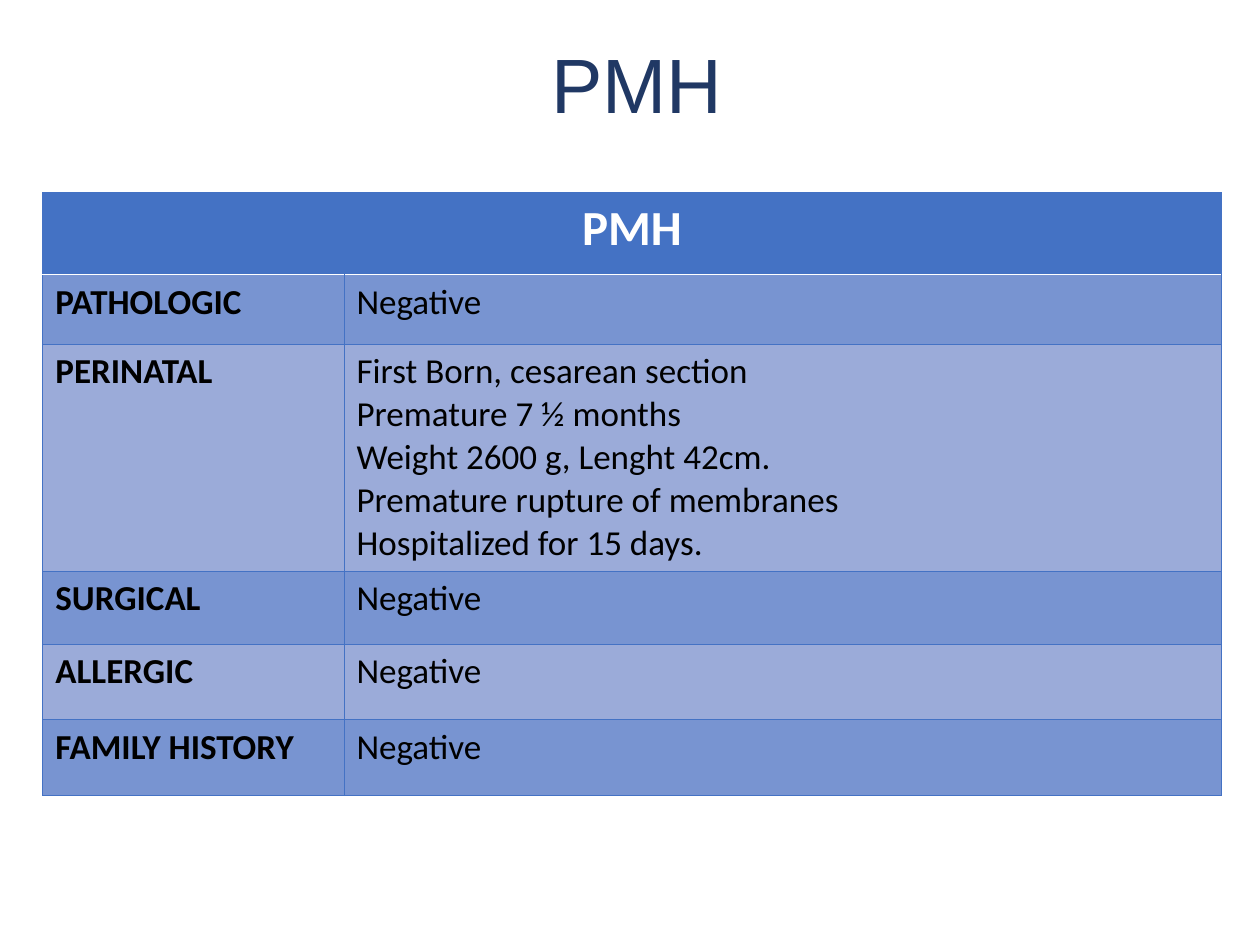
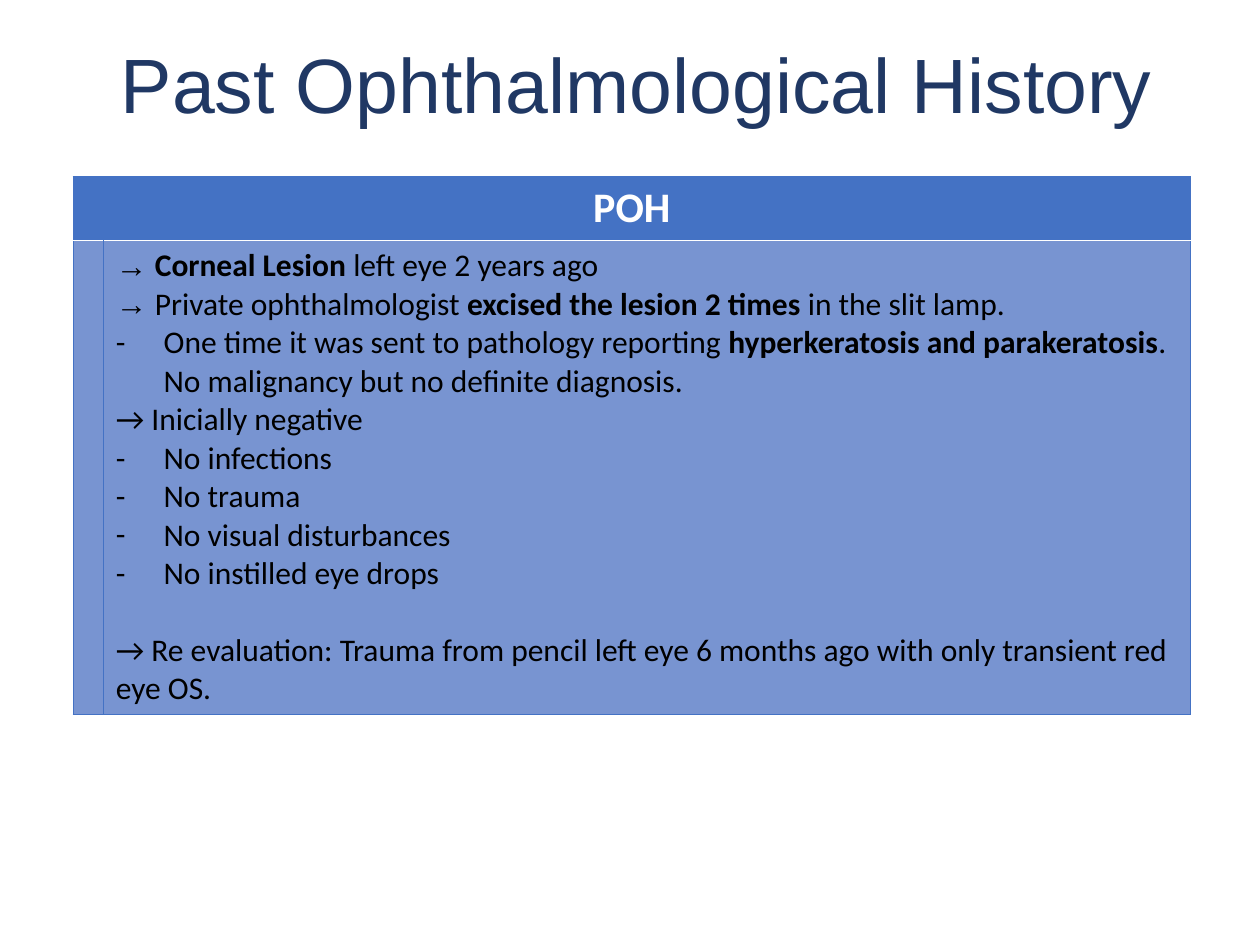
import pptx
import pptx.util
import pptx.dml.color
import pptx.enum.text
import pptx.oxml
import pptx.oxml.ns
from pptx.util import Inches

RGBColor = pptx.dml.color.RGBColor
NAVY = RGBColor(0x20, 0x38, 0x64)
BLUE = RGBColor(0x44, 0x72, 0xC4)
DARK_BAND = RGBColor(0x78, 0x94, 0xD1)
LIGHT_BAND = RGBColor(0x9B, 0xAB, 0xD9)
WHITE = RGBColor(0xFF, 0xFF, 0xFF)
BLACK = RGBColor(0x00, 0x00, 0x00)
TITLE_FONT, BODY_FONT = "Arial", "Calibri"
ARROW = {"bullet": "→", "bullet_font": TITLE_FONT, "indent": 0.31}
DASH = {"bullet": "-", "bullet_font": BODY_FONT, "indent": 0.38}


def bold(text):
    return (text, True)


# Content: a paragraph is (list of spans, paragraph format); a cell is a list of paragraphs
def plain(*lines):
    return [([line], {}) for line in lines]


def label(text):
    return [([bold(text)], {})]


NEGATIVE = plain("Negative")
PERINATAL = plain(
    "First Born, cesarean section",
    "Premature 7 ½ months",
    "Weight 2600 g, Lenght 42cm.",
    "Premature rupture of membranes",
    "Hospitalized for 15 days.",
)
EYE_HISTORY = [
    ([bold("Corneal Lesion "), "left eye 2 years ago"], ARROW),
    (["Private ophthalmologist ", bold("excised the lesion 2 times"),
      " in the slit lamp."], ARROW),
    (["One time it was sent to pathology reporting ",
      bold("hyperkeratosis and parakeratosis"),
      ". No malignancy but no definite diagnosis."], DASH),
    (["→ Inicially negative"], {}),
    (["No infections"], DASH),
    (["No trauma"], DASH),
    (["No visual disturbances"], DASH),
    (["No instilled eye drops"], DASH),
    (["→ Re evaluation: Trauma from pencil left eye 6 months ago "
      "with only transient red eye OS."], {"space_before": 22}),
]

SLIDES = [
    {
        "title": "PMH", "header": "PMH", "header_size": 28, "body_size": 20,
        "left": 0.34, "top": 1.53, "columns": [2.39, 6.96],
        "heights": [0.65, 0.55, 1.8, 0.58, 0.6, 0.6],
        "rows": [
            (label("PATHOLOGIC"), NEGATIVE),
            (label("PERINATAL"), PERINATAL),
            (label("SURGICAL"), NEGATIVE),
            (label("ALLERGIC"), NEGATIVE),
            (label("FAMILY HISTORY"), NEGATIVE),
        ],
    },
    {
        "title": "Past Ophthalmological History",
        "header": "POH", "header_size": 24, "body_size": 18,
        "left": 0.58, "top": 1.4, "columns": [0.23, 8.63],
        "heights": [0.51, 3.76],
        "rows": [([], EYE_HISTORY)],
    },
]


def add_bullet(para, bullet, bullet_font, indent):
    properties = para._p.get_or_add_pPr()
    properties.set("marL", str(Inches(indent)))
    properties.set("indent", str(-Inches(indent)))
    for tag, name, value in (("a:buFont", "typeface", bullet_font),
                             ("a:buChar", "char", bullet)):
        element = pptx.oxml.parse_xml(f"<{tag} {pptx.oxml.ns.nsdecls('a')}/>")
        element.set(name, value)
        properties.append(element)


def write_text(frame, paragraphs, size, color, font=BODY_FONT, align=None, line_spacing=None):
    for index, (spans, style) in enumerate(paragraphs):
        para = frame.paragraphs[0] if index == 0 else frame.add_paragraph()
        if "bullet" in style:
            add_bullet(para, **style)
        if "space_before" in style:
            para.space_before = pptx.util.Pt(style["space_before"])
        para.alignment = align
        para.line_spacing = line_spacing
        for span in spans:
            text, is_bold = span if isinstance(span, tuple) else (span, False)
            run = para.add_run()
            run.text = text
            run.font.name = font
            run.font.size = pptx.util.Pt(size)
            run.font.bold = is_bold
            run.font.color.rgb = color


def format_cell(cell, fill, white_side=None):
    """Fill the cell and rule its four sides, with one of them in white."""
    cell.fill.solid()
    cell.fill.fore_color.rgb = fill
    for index, side in enumerate("LRTB"):
        color, width = (WHITE, 1) if side == white_side else (BLUE, 0.5)
        line = pptx.oxml.parse_xml(
            f'<a:ln{side} {pptx.oxml.ns.nsdecls("a")} w="{pptx.util.Pt(width)}">'
            f'<a:solidFill><a:srgbClr val="{color}"/></a:solidFill></a:ln{side}>')
        cell._tc.get_or_add_tcPr().insert(index, line)


def add_title(page, text):
    title = page.shapes.title
    title.left, title.top = Inches(0.38), Inches(-0.02)
    title.width, title.height = Inches(9.35), Inches(1.45)
    title.text_frame.vertical_anchor = pptx.enum.text.MSO_ANCHOR.MIDDLE
    write_text(title.text_frame, plain(text), 44, NAVY, font=TITLE_FONT,
               align=pptx.enum.text.PP_ALIGN.CENTER, line_spacing=0.9)


def add_history_table(page, content):
    columns, heights = content["columns"], content["heights"]
    table = page.shapes.add_table(
        len(heights), len(columns), Inches(content["left"]), Inches(content["top"]),
        Inches(sum(columns)), Inches(sum(heights))).table
    for column, width in zip(table.columns, columns):
        column.width = Inches(width)
    for row, height in zip(table.rows, heights):
        row.height = Inches(height)

    # Header across both columns
    header = table.cell(0, 0)
    header.merge(table.cell(0, 1))
    for cell in table.rows[0].cells:
        format_cell(cell, BLUE, white_side="B")
    write_text(header.text_frame, label(content["header"]), content["header_size"],
               WHITE, align=pptx.enum.text.PP_ALIGN.CENTER)

    # Banded body rows
    for row_index, row in enumerate(content["rows"], start=1):
        for column_index, paragraphs in enumerate(row):
            cell = table.cell(row_index, column_index)
            format_cell(cell, DARK_BAND if row_index % 2 else LIGHT_BAND,
                        white_side="T" if row_index == 1 else None)
            write_text(cell.text_frame, paragraphs, content["body_size"], BLACK)


def main():
    deck = pptx.Presentation()
    deck.slide_width, deck.slide_height = Inches(10), Inches(7.5)
    for content in SLIDES:
        page = deck.slides.add_slide(deck.slide_layouts.get_by_name("Title Only"))
        add_title(page, content["title"])
        add_history_table(page, content)
    deck.save("out.pptx")


if __name__ == "__main__":
    main()
